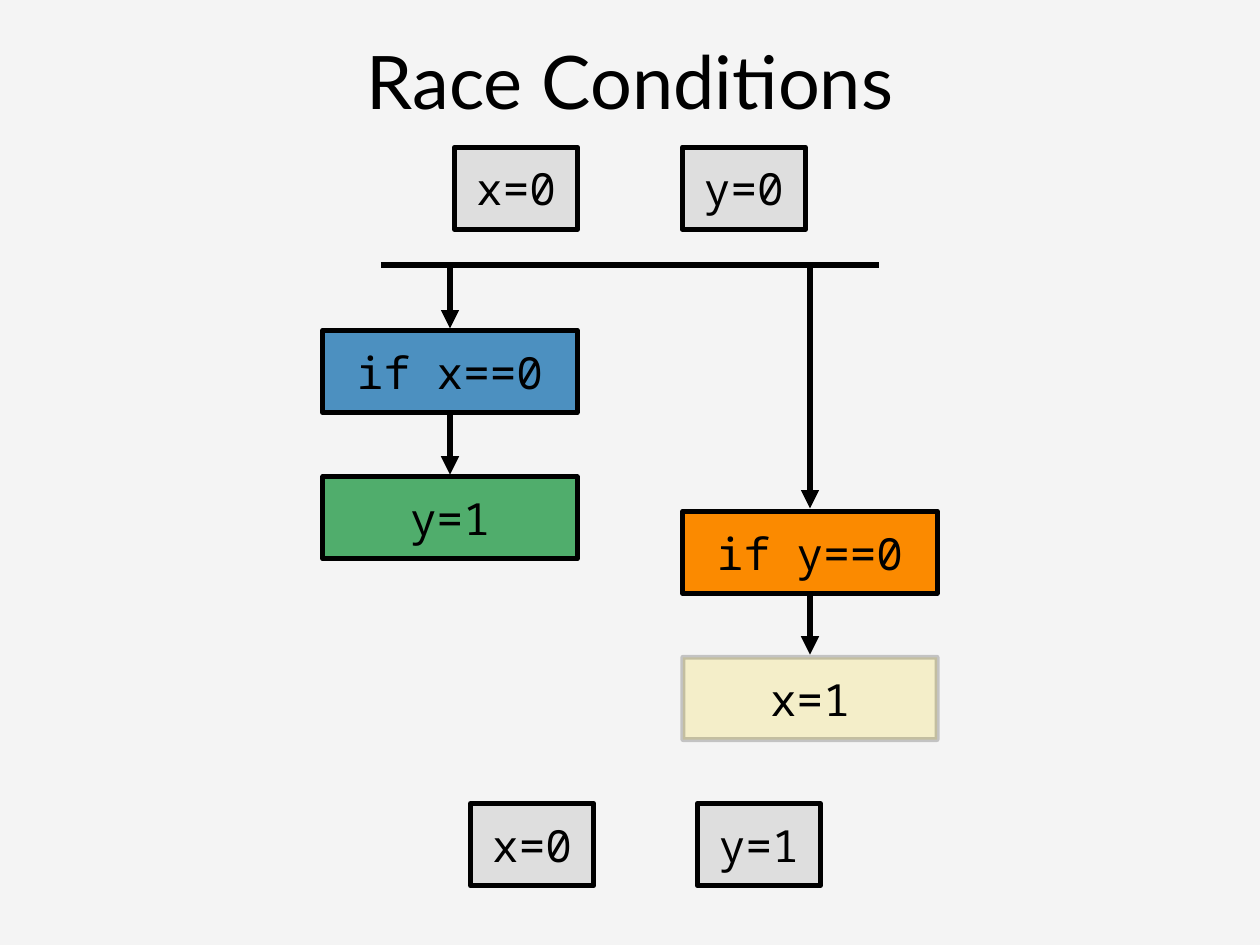
from pptx import Presentation
from pptx.dml.color import RGBColor
from pptx.enum.shapes import MSO_CONNECTOR, MSO_SHAPE
from pptx.enum.text import MSO_ANCHOR, PP_ALIGN
from pptx.oxml.ns import qn
from pptx.util import Cm, Pt
from lxml import etree

RECT = MSO_SHAPE.RECTANGLE
STRAIGHT = MSO_CONNECTOR.STRAIGHT
MIDDLE = MSO_ANCHOR.MIDDLE
CENTER = PP_ALIGN.CENTER

BLACK = RGBColor(0x00, 0x00, 0x00)
PAPER = RGBColor(0xF4, 0xF4, 0xF4)
GRAY = RGBColor(0xDE, 0xDE, 0xDE)
BLUE = RGBColor(0x4C, 0x90, 0xC0)
GREEN = RGBColor(0x50, 0xAD, 0x6C)
ORANGE = RGBColor(0xFB, 0x8A, 0x00)
YELLOW = RGBColor(0xF7, 0xD7, 0x1E)

BOX_H = 2.36
VAR_W, STEP_W = 3.53, 7.29
LEFT_X, RIGHT_X = 12.9, 23.22
FORK_Y = 7.59


def set_text(sp, text, font, size):
    tf = sp.text_frame
    tf.word_wrap = True
    tf.vertical_anchor = MIDDLE
    tf.margin_left = tf.margin_right = tf.margin_top = tf.margin_bottom = Cm(0.15)
    p = tf.paragraphs[0]
    p.text = text
    p.alignment = CENTER
    p.font.name = font
    p.font.size = Pt(size)
    p.font.color.rgb = BLACK


def add_line(x1, y1, x2, y2, arrow):
    line = s.shapes.add_connector(STRAIGHT, Cm(x1), Cm(y1), Cm(x2), Cm(y2))
    line.line.color.rgb = BLACK
    line.line.width = Pt(5)
    if arrow:
        etree.SubElement(line.line._get_or_add_ln(), qn("a:tailEnd"), type="triangle")
    etree.SubElement(line._element.spPr, qn("a:effectLst"))


prs = Presentation()
prs.slide_width, prs.slide_height = Cm(36.12), Cm(27.1)
s = prs.slides.add_slide(prs.slide_layouts[5])
s.background.fill.solid()
s.background.fill.fore_color.rgb = PAPER

title = s.shapes.title
title.left, title.top, title.width, title.height = Cm(2.64), Cm(0.23), Cm(30.84), Cm(4.14)
set_text(title, "Race Conditions", "Lato", 60)

add_line(10.92, FORK_Y, 25.2, FORK_Y, False)
for x, y1, y2 in [
    (LEFT_X, FORK_Y, 9.42),
    (LEFT_X, 11.81, 13.61),
    (RIGHT_X, FORK_Y, 14.58),
    (RIGHT_X, 16.99, 18.77),
]:
    add_line(x, y1, x, y2, True)

boxes = [
    ("x=0", 13.03, 4.22, VAR_W, GRAY, 100),
    ("y=0", 19.56, 4.22, VAR_W, GRAY, 100),
    ("if x==0", LEFT_X - STEP_W / 2, 9.47, STEP_W, BLUE, 100),
    ("y=1", LEFT_X - STEP_W / 2, 13.67, STEP_W, GREEN, 100),
    ("if y==0", RIGHT_X - STEP_W / 2, 14.66, STEP_W, ORANGE, 100),
    ("x=1", RIGHT_X - STEP_W / 2, 18.85, STEP_W, YELLOW, 20),
    ("x=0", 13.49, 23.04, VAR_W, GRAY, 100),
    ("y=1", 19.99, 23.04, VAR_W, GRAY, 100),
]
for text, x, y, w, color, opacity in boxes:
    sp = s.shapes.add_shape(RECT, Cm(x), Cm(y), Cm(w), Cm(BOX_H))
    sp.shadow.inherit = False
    sp.fill.solid()
    sp.fill.fore_color.rgb = color
    sp.line.color.rgb = BLACK
    sp.line.width = Pt(4)
    if opacity < 100:
        for clr in sp._element.spPr.iter(qn("a:srgbClr")):
            etree.SubElement(clr, qn("a:alpha"), val=str(opacity * 1000))
    set_text(sp, text, "Noto Sans Mono", 36)

prs.save("out.pptx")
